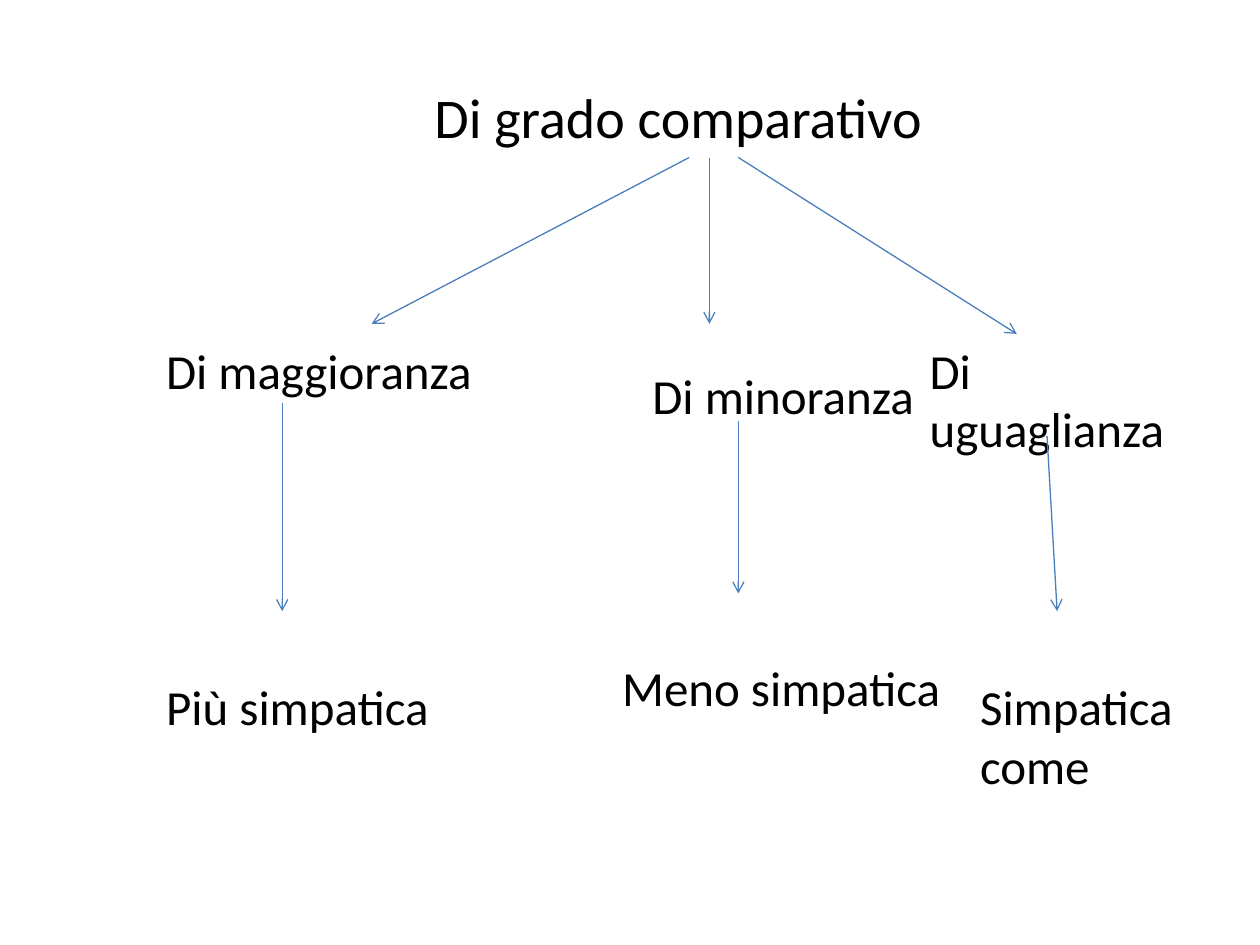
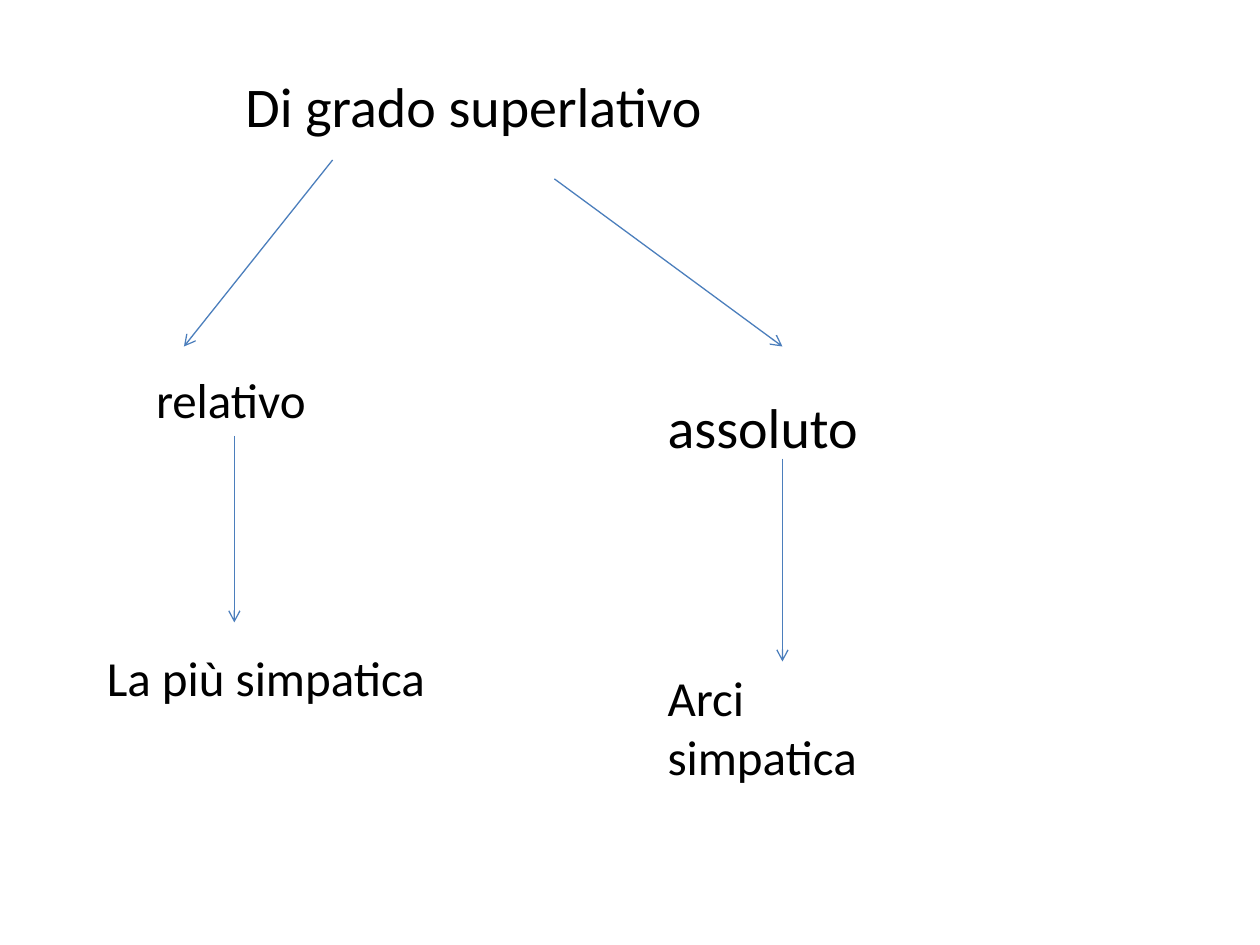
from pptx import Presentation
from pptx import util as u
from pptx.dml.color import RGBColor
from pptx.enum import shapes, text
from pptx.oxml.ns import qn
from lxml import etree

PX = 9144
WIDE, HIGH = 1000, 750
FONT = "Calibri"
INK = RGBColor(0, 0, 0)
BLUE = RGBColor(0x4B, 0x7E, 0xBC)
BIG, MID = 32, 28
TALL = {(BIG, 1): 64, (MID, 1): 57, (MID, 2): 104}

# label: text, left, top, width, size, lines; arrow: x1, y1, x2, y2
SLIDES = [
    {
        "title": ("Di grado comparativo", 335, 61, 583, BIG, 1),
        "branches": [
            {
                "stem": (547, 125, 295, 257),
                "degree": ("Di maggioranza", 122, 265, 567, MID, 1),
                "link": (224, 320, 224, 485),
                "example": ("Più simpatica", 122, 532, 315, MID, 1),
            },
            {
                "stem": (563, 125, 563, 257),
                "degree": ("Di minoranza", 508, 285, 283, MID, 1),
                "link": (586, 334, 586, 471),
                "example": ("Meno simpatica", 484, 517, 283, MID, 1),
            },
            {
                "stem": (586, 125, 807, 265),
                "degree": ("Di uguaglianza", 728, 265, 213, MID, 2),
                "link": (831, 346, 839, 485),
                "example": ("Simpatica come", 768, 532, 197, MID, 2),
            },
        ],
    },
    {
        "title": ("Di grado superlativo", 185, 52, 606, BIG, 1),
        "branches": [
            {
                "stem": (264, 127, 146, 275),
                "degree": ("relativo", 114, 288, 374, MID, 1),
                "link": (186, 346, 186, 494),
                "example": ("La più simpatica", 75, 509, 307, MID, 1),
            },
            {
                "stem": (440, 142, 621, 275),
                "degree": ("assoluto", 520, 307, 272, BIG, 1),
                "link": (621, 364, 621, 525),
                "example": ("Arci simpatica", 520, 525, 236, MID, 2),
            },
        ],
    },
]


def label(slide, words, left, top, width, size, lines):
    spot = [n * PX for n in (left, top, width, TALL[size, lines])]
    frame = slide.shapes.add_textbox(*spot).text_frame
    frame.word_wrap = True
    frame.auto_size = text.MSO_AUTO_SIZE.SHAPE_TO_FIT_TEXT
    para = frame.paragraphs[0]
    para.text = words
    para.font.name = FONT
    para.font.size = u.Pt(size)
    para.font.color.rgb = INK


def arrow(slide, *ends):
    line = slide.shapes.add_connector(
        shapes.MSO_CONNECTOR.STRAIGHT, *[n * PX for n in ends])
    line.line.color.rgb = BLUE
    line.line.width = u.Pt(0.75)
    props = line._element.spPr
    etree.SubElement(props.find(qn("a:ln")), qn("a:tailEnd"), type="arrow")
    etree.SubElement(props, qn("a:effectLst"))


def main():
    deck = Presentation()
    deck.slide_width, deck.slide_height = WIDE * PX, HIGH * PX
    for plan in SLIDES:
        slide = deck.slides.add_slide(deck.slide_layouts[6])
        label(slide, *plan["title"])
        for branch in plan["branches"]:
            arrow(slide, *branch["stem"])
            label(slide, *branch["degree"])
            arrow(slide, *branch["link"])
            label(slide, *branch["example"])
    deck.save("out.pptx")


if __name__ == "__main__":
    main()
